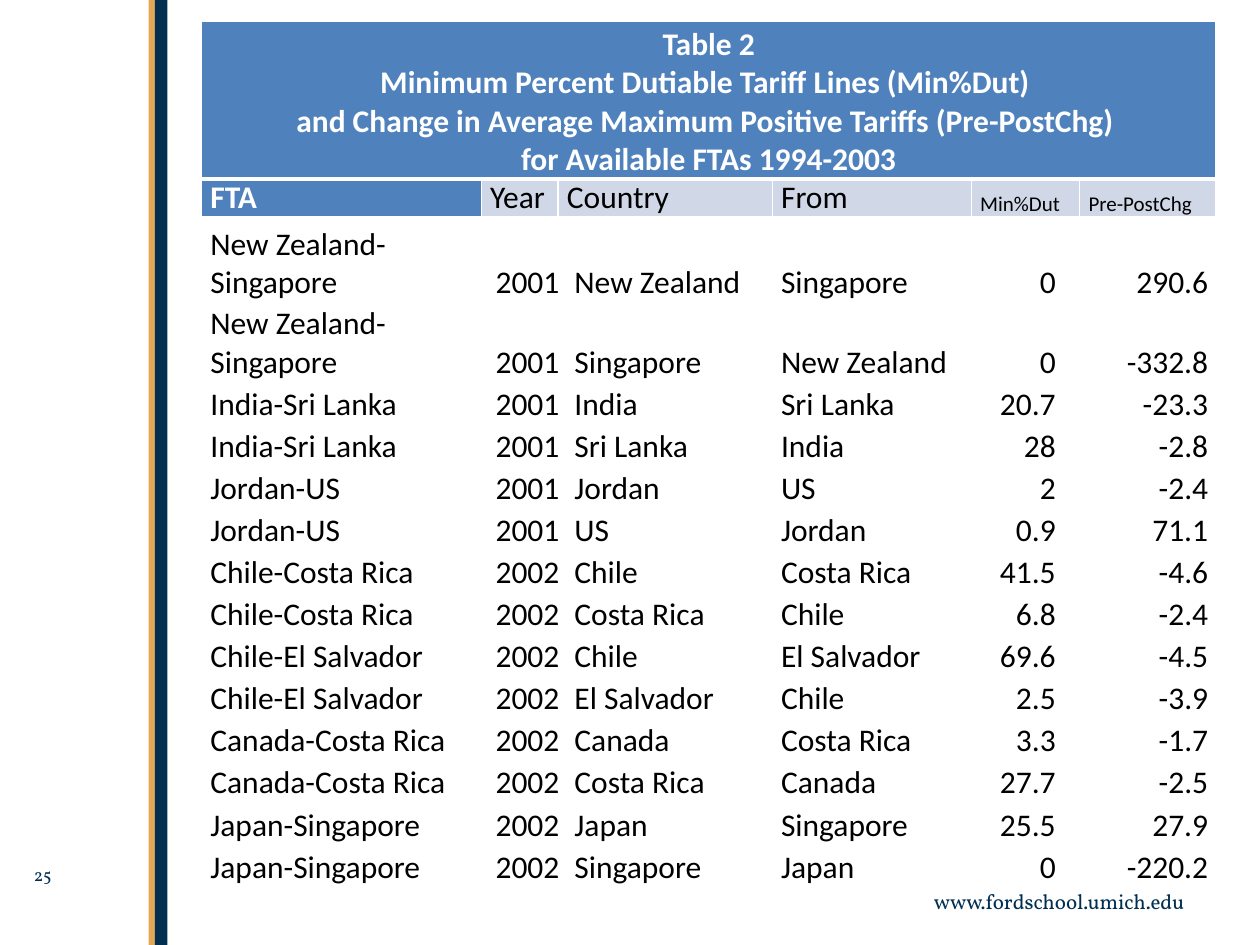
from dataclasses import dataclass

from lxml.etree import SubElement
from pptx import Presentation
from pptx.dml.color import RGBColor
from pptx.enum.shapes import MSO_SHAPE
from pptx.enum.text import MSO_ANCHOR, PP_ALIGN
from pptx.oxml.ns import qn
from pptx.util import Inches, Pt


@dataclass(frozen=True)
class Theme:
    navy: str = "002F52"
    gold: str = "E3A856"
    blue: str = "4F81BD"
    pale: str = "D0D8E8"
    white: str = "FFFFFF"
    black: str = "000000"
    table_font: str = "Calibri"
    school_font: str = "Vollkorn"
    body: int = 18
    small: int = 12
    page: int = 10


THEME = Theme()

TITLE = [
    "Table 2",
    "Minimum Percent Dutiable Tariff Lines (Min%Dut) ",
    "and Change in Average Maximum Positive Tariffs (Pre-PostChg) ",
    "for Available FTAs 1994-2003",
]
HEADINGS = ["FTA", "Year", "Country", "From", "Min%Dut", "Pre-PostChg"]
HEADING_WIDTHS = [2.22, 0.61, 1.7, 1.58, 0.86, 1.08]
TARIFF_WIDTHS = [2.22, 0.67, 1.64, 1.58, 0.72, 1.21]
NUMBER_COLUMNS = {1, 4, 5}

# Each agreement: two members, year, then (Min%Dut, Pre-PostChg) for each direction
AGREEMENTS = [
    ("New Zealand", "Singapore", 2001, ("0", "290.6"), ("0", "-332.8")),
    ("India", "Sri Lanka", 2001, ("20.7", "-23.3"), ("28", "-2.8")),
    ("Jordan", "US", 2001, ("2", "-2.4"), ("0.9", "71.1")),
    ("Chile", "Costa Rica", 2002, ("41.5", "-4.6"), ("6.8", "-2.4")),
    ("Chile", "El Salvador", 2002, ("69.6", "-4.5"), ("2.5", "-3.9")),
    ("Canada", "Costa Rica", 2002, ("3.3", "-1.7"), ("27.7", "-2.5")),
    ("Japan", "Singapore", 2002, ("25.5", "27.9"), ("0", "-220.2")),
]


def style(paragraph, font, size, color, align=PP_ALIGN.LEFT, bold=False):
    paragraph.alignment = align
    paragraph.font.name = font
    paragraph.font.size = Pt(size)
    paragraph.font.bold = bold
    paragraph.font.color.rgb = RGBColor.from_string(color)


def fill_cell(cell, lines, inset, fill=None, **text_style):
    cell.vertical_anchor = MSO_ANCHOR.BOTTOM
    cell.margin_left = cell.margin_right = Inches(inset)
    cell.margin_top = cell.margin_bottom = 0
    if fill:
        cell.fill.solid()
        cell.fill.fore_color.rgb = RGBColor.from_string(fill)
    else:
        cell.fill.background()
    cell.text = "\n".join(lines)
    for paragraph in cell.text_frame.paragraphs:
        style(paragraph, THEME.table_font, **text_style)


def set_borders(cell, bottom=1):
    properties = cell._tc.get_or_add_tcPr()
    for index, (side, width) in enumerate(
        [("a:lnL", 1), ("a:lnR", 1), ("a:lnT", 1), ("a:lnB", bottom)]
    ):
        line = SubElement(properties, qn(side), w=str(Pt(width)))
        solid = SubElement(line, qn("a:solidFill"))
        SubElement(solid, qn("a:srgbClr"), val=THEME.white)
        properties.insert(index, line)


def add_plain_table(slide, box, widths, heights):
    table = slide.shapes.add_table(
        len(heights), len(widths), *map(Inches, box)
    ).table
    table.first_row = table.horz_banding = False
    for column, width in zip(table.columns, widths):
        column.width = Inches(width)
    for row, height in zip(table.rows, heights):
        row.height = Inches(height)
    return table


def add_stripes(slide, left, top, height):
    for offset, width, color in [(0, 0.05, THEME.gold), (0.05, 0.1, THEME.navy)]:
        stripe = slide.shapes.add_shape(
            MSO_SHAPE.RECTANGLE, Inches(left + offset), Inches(top),
            Inches(width), Inches(height))
        stripe.shadow.inherit = False
        stripe.fill.solid()
        stripe.fill.fore_color.rgb = RGBColor.from_string(color)
        stripe.line.fill.background()


def add_label(slide, box, text, size, align=PP_ALIGN.LEFT):
    frame = slide.shapes.add_textbox(*map(Inches, box)).text_frame
    frame.word_wrap = True
    frame.text = text
    style(frame.paragraphs[0], THEME.school_font, size, THEME.navy, align)


def add_heading_table(slide, box):
    table = add_plain_table(slide, box, HEADING_WIDTHS, [1.25, 0.24])
    title = table.cell(0, 0)
    title.merge(table.cell(0, len(HEADINGS) - 1))
    fill_cell(title, TITLE, 0.07, THEME.blue, size=THEME.body,
              color=THEME.white, align=PP_ALIGN.CENTER, bold=True)
    for column, heading in enumerate(HEADINGS):
        first = column == 0
        fill_cell(table.cell(1, column), [heading], 0.07,
                  THEME.blue if first else THEME.pale,
                  size=THEME.small if column >= 4 else THEME.body,
                  color=THEME.white if first else THEME.black, bold=first)
        set_borders(table.cell(0, column), bottom=3)
        set_borders(table.cell(1, column))


def add_tariff_table(slide, box):
    rows = []
    for one, other, year, forward, reverse in AGREEMENTS:
        rows.append((f"{one}-{other}", str(year), one, other, *forward))
        rows.append((f"{one}-{other}", str(year), other, one, *reverse))

    # The first agreement wraps to two lines; the rest share the height left
    wrapped = [0.63] * 2
    singles = len(rows) - len(wrapped)
    heights = wrapped + [(box[3] - sum(wrapped)) / singles] * singles
    table = add_plain_table(slide, box, TARIFF_WIDTHS, heights)
    for r, values in enumerate(rows):
        for c, value in enumerate(values):
            align = PP_ALIGN.RIGHT if c in NUMBER_COLUMNS else PP_ALIGN.LEFT
            fill_cell(table.cell(r, c), [value], 0.06, size=THEME.body,
                      color=THEME.black, align=align)


def main():
    prs = Presentation()
    prs.slide_width, prs.slide_height = Inches(10), Inches(7.5)
    slide = prs.slides.add_slide(prs.slide_layouts[6])

    # School frame
    add_stripes(slide, 1.18, 0, 7.5)
    add_label(slide, (7, 7, 2.5, 0.3), "www.fordschool.umich.edu",
              THEME.small, PP_ALIGN.RIGHT)
    add_label(slide, (0.17, 6.81, 0.92, 0.34), "25", THEME.page)

    # Tariff tables
    add_heading_table(slide, (1.6, 0.17, 8.06, 1.49))
    add_tariff_table(slide, (1.61, 1.77, 8.04, 5.27))

    prs.save("out.pptx")


if __name__ == "__main__":
    main()
